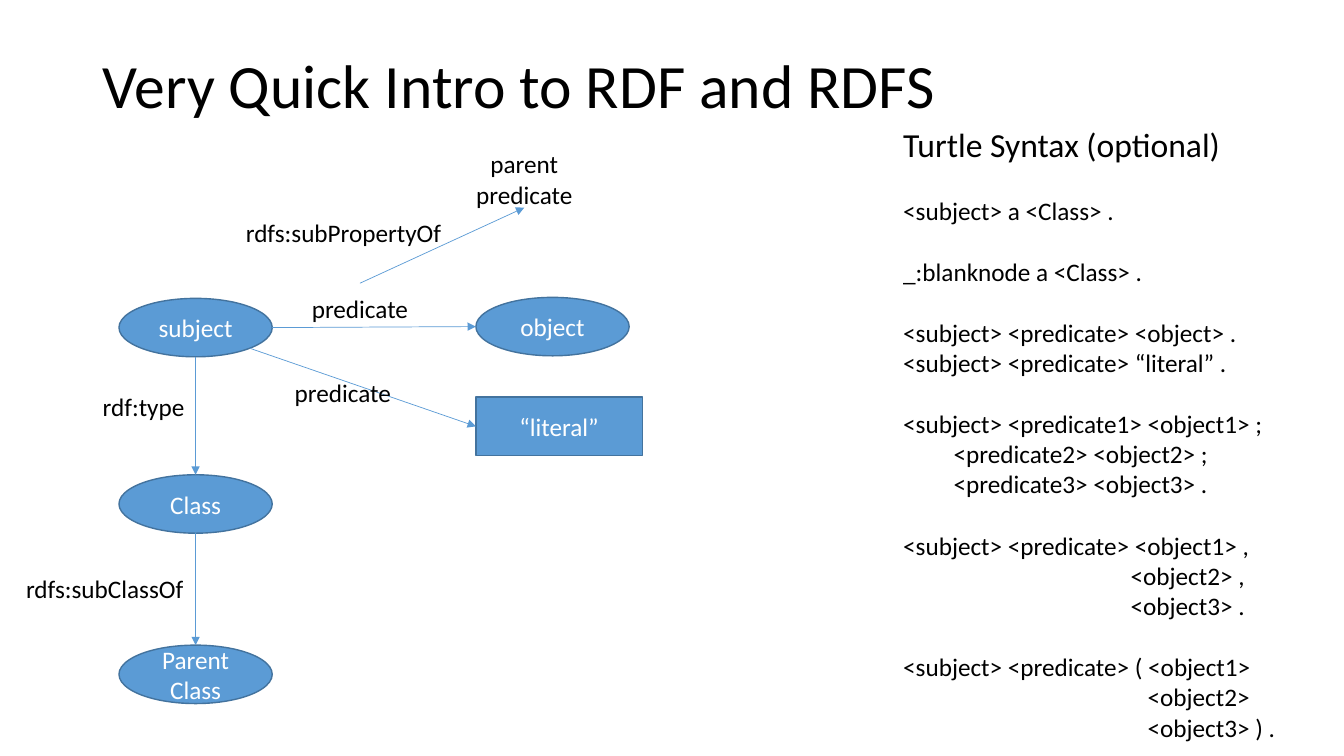
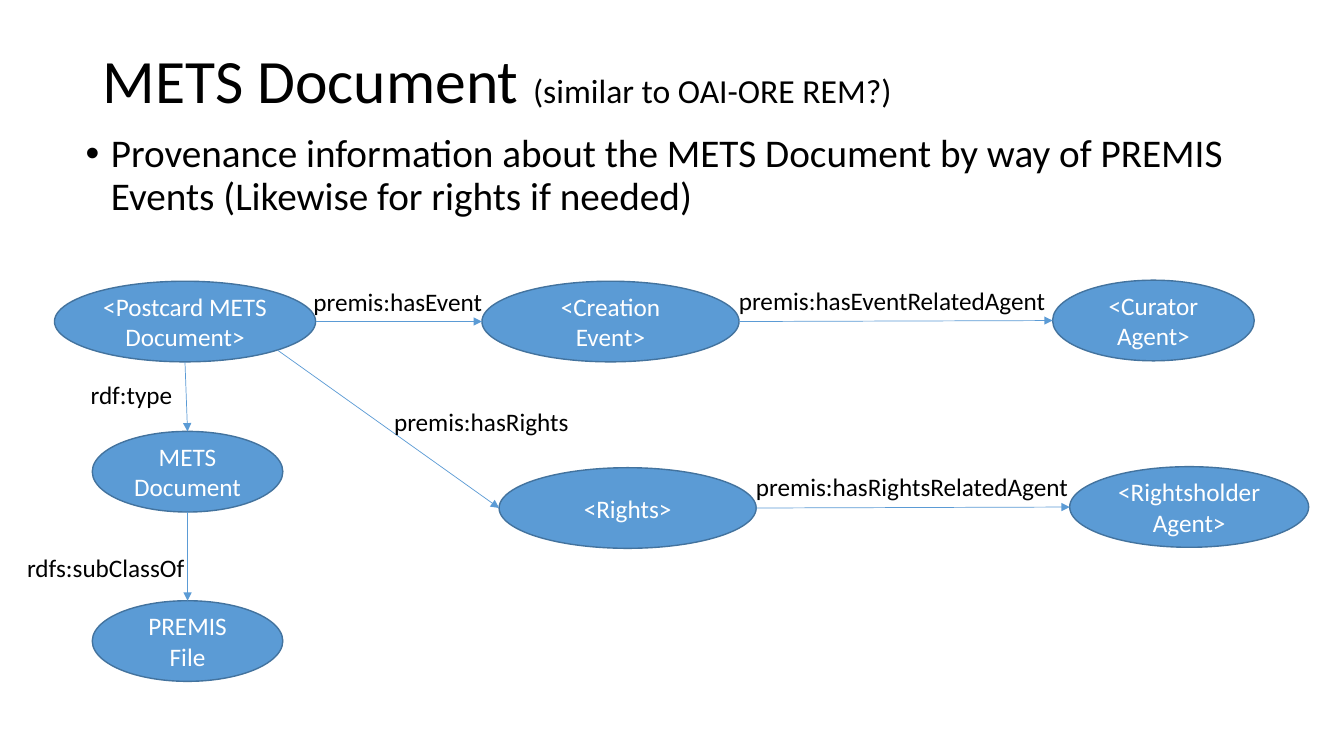
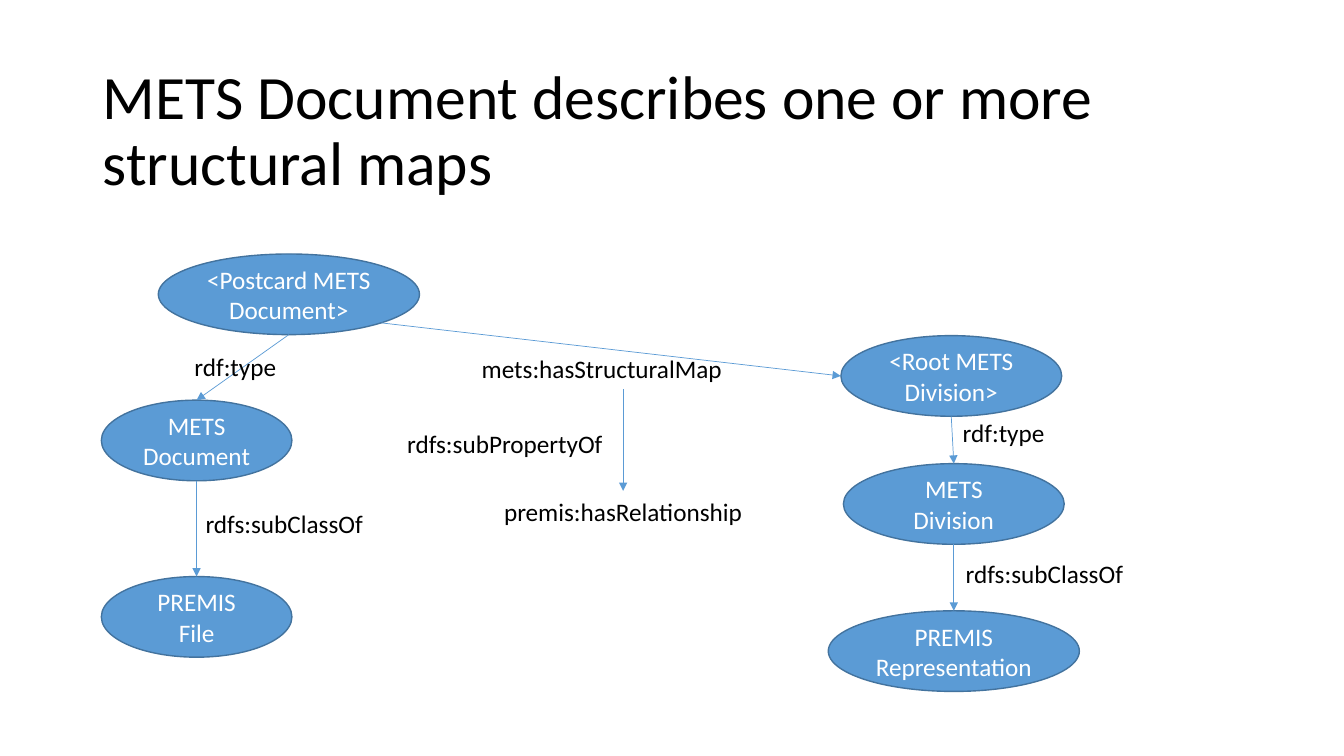
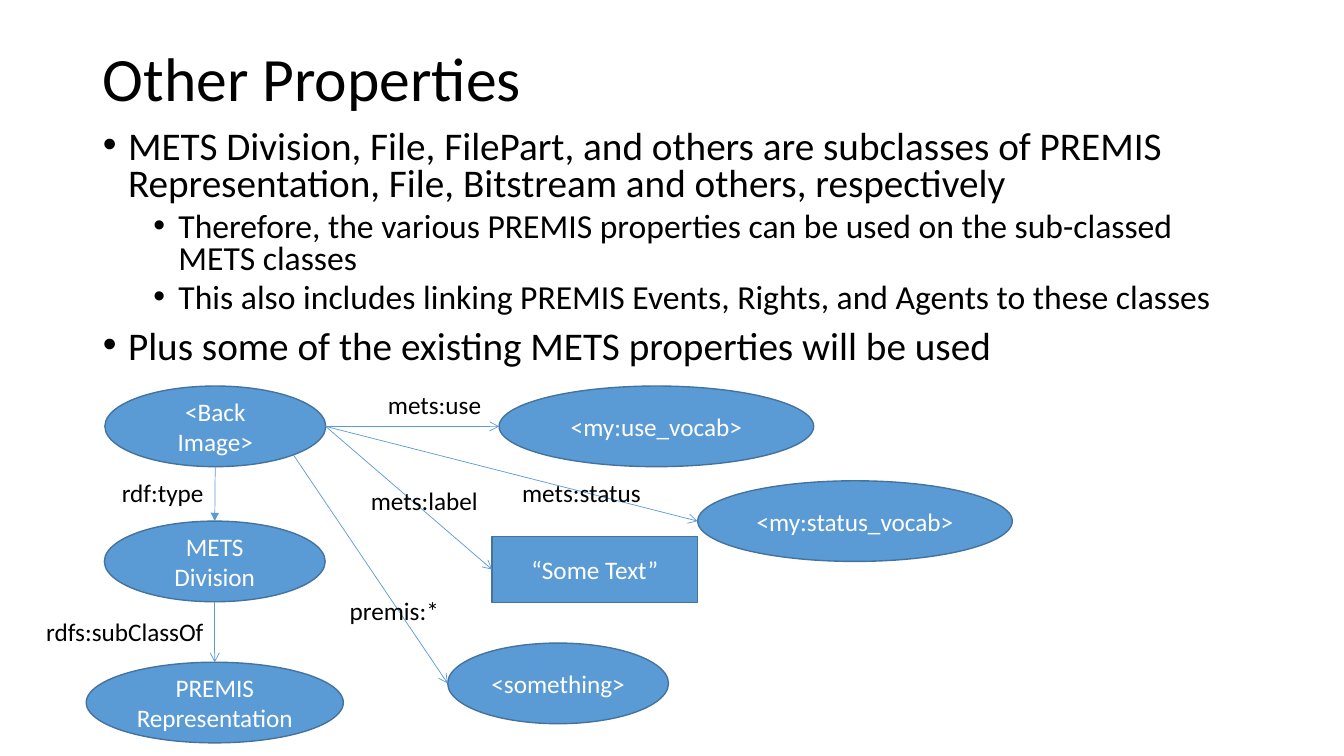
from pptx import Presentation
from pptx.dml.color import RGBColor
from pptx.enum.shapes import MSO_CONNECTOR, MSO_SHAPE
from pptx.enum.text import MSO_ANCHOR, MSO_AUTO_SIZE, PP_ALIGN
from pptx.oxml.ns import qn
from pptx.util import Inches, Pt
from lxml.etree import SubElement

COLORS = {"node": "5B9BD5", "edge": "43739E", "text": "000000", "node_text": "FFFFFF"}
FONT = "Calibri"
TITLE_ONLY, TITLE_AND_BODY = 5, 1
MARGIN, TITLE_TOP, CONTENT_WIDTH = 0.92, 0.4, 11.5
NODE_HEIGHT, LABEL_HEIGHT = 0.8, 0.4
BLANK_LINE = Pt(22)
# level: (indent in inches, text size, space before)
BULLETS = {0: (0.25, 28, 10), 1: (0.75, 24, 5)}
# share of the width and height at which an arrow meets a node
SIDES = {
    "top": (0.5, 0),
    "left": (0, 0.5),
    "bottom": (0.5, 1),
    "right": (1, 0.5),
    "low_right": (0.854, 0.854),
}

TURTLE_GROUPS = [
    "<subject> a <Class> .",
    "_:blanknode a <Class> .",
    "<subject> <predicate> <object> .\n<subject> <predicate> “literal” .",
    "<subject> <predicate1> <object1> ;\n\t<predicate2> <object2> ;\n\t<predicate3> <object3> .",
    "<subject> <predicate> <object1> ,\n"
    "                                        <object2> ,\n"
    "                                        <object3> .",
    "<subject> <predicate> ( <object1>\n"
    "                                           <object2>\n"
    "                                           <object3> ) .",
]


def color(name):
    return RGBColor.from_string(COLORS[name])


def place(shape, left, top, width, height):
    shape.left, shape.top = Inches(left), Inches(top)
    shape.width, shape.height = Inches(width), Inches(height)


def style(para, size, shade="text"):
    para.font.name = FONT
    para.font.size = Pt(size)
    para.font.color.rgb = color(shade)


def add_page(deck, layout, title, title_height, aside=""):
    """Add a slide with its title and an optional smaller remark after it."""
    page = deck.slides.add_slide(deck.slide_layouts[layout])
    box = page.shapes.title
    place(box, MARGIN, TITLE_TOP, CONTENT_WIDTH, title_height)
    frame = box.text_frame
    frame.auto_size = MSO_AUTO_SIZE.NONE
    frame.vertical_anchor = MSO_ANCHOR.MIDDLE
    para = frame.paragraphs[0]
    para.alignment = PP_ALIGN.LEFT
    para.line_spacing = 0.9
    para.add_run().text = title
    if aside:
        span = para.add_run()
        span.text = aside
        span.font.size = Pt(24)
    style(para, 44)
    return page


def fill_body(page, left, top, height, items, line_spacing):
    """Write (level, text) items as a bullet list in the body placeholder."""
    box = page.placeholders[1]
    place(box, left, top, CONTENT_WIDTH, height)
    frame = box.text_frame
    frame.auto_size = MSO_AUTO_SIZE.NONE
    for number, (level, text) in enumerate(items):
        para = frame.add_paragraph() if number else frame.paragraphs[0]
        indent, size, gap = BULLETS[level]
        para.text = text
        para.level = level
        para.line_spacing = line_spacing
        para.space_before = Pt(gap if number else 0)
        properties = para._p.get_or_add_pPr()
        properties.set("marL", str(Inches(indent)))
        properties.set("indent", str(-Inches(0.25)))
        SubElement(properties, qn("a:buFont"), typeface="Arial")
        SubElement(properties, qn("a:buChar"), char="•")
        style(para, size)


def add_node(page, text, left, top, width, height=NODE_HEIGHT, preset=MSO_SHAPE.OVAL):
    node = page.shapes.add_shape(preset, 0, 0, 0, 0)
    place(node, left, top, width, height)
    node.shadow.inherit = False
    node.fill.solid()
    node.fill.fore_color.rgb = color("node")
    node.line.color.rgb = color("edge")
    node.line.width = Pt(1)
    frame = node.text_frame
    frame.word_wrap = True
    frame.vertical_anchor = MSO_ANCHOR.MIDDLE
    para = frame.paragraphs[0]
    para.text = text
    para.alignment = PP_ALIGN.CENTER
    style(para, 18, "node_text")
    return node


def add_label(page, text, left, top, width, height=LABEL_HEIGHT, centred=False):
    box = page.shapes.add_textbox(0, 0, 0, 0)
    place(box, left, top, width, height)
    frame = box.text_frame
    frame.word_wrap = centred
    para = frame.paragraphs[0]
    para.text = text
    if centred:
        frame.vertical_anchor = MSO_ANCHOR.MIDDLE
        para.alignment = PP_ALIGN.CENTER
    style(para, 18)
    return box


def point(node, side):
    across, down = SIDES[side]
    return int(node.left + across * node.width), int(node.top + down * node.height)


def add_arrow(page, start, end, head="triangle"):
    arrow = page.shapes.add_connector(MSO_CONNECTOR.STRAIGHT, *start, *end)
    arrow.line.color.rgb = color("node")
    arrow.line.width = Pt(0.5)
    properties = arrow._element.spPr
    SubElement(properties.find(qn("a:ln")), qn("a:tailEnd"), type=head)
    SubElement(properties, qn("a:effectLst"))
    return arrow


def link(page, start, end, leave="right", arrive="left", head="triangle"):
    return add_arrow(page, point(start, leave), point(end, arrive), head)


def add_class_chain(page, instance, center, steps, height=NODE_HEIGHT, heads=("triangle", "triangle")):
    """Hang a class and its parent class below an instance.

    Each step is (text, width, drop, label shift, label drop); drops count from
    the top of the instance and label shifts from the center line.
    """
    top = instance.top.inches
    relations = (("rdf:type", 1.02), ("rdfs:subClassOf", 1.78))
    above = instance
    for step, (relation, label_width), head in zip(steps, relations, heads):
        text, width, drop, label_shift, label_drop = step
        node = add_node(page, text, center - width / 2, top + drop, width, height)
        link(page, above, node, "bottom", "top", head)
        add_label(page, relation, center + label_shift, top + label_drop, label_width)
        above = node


def add_turtle_listing(page, left, top, width, height):
    box = add_label(page, "Turtle Syntax (optional)", left, top, width, height)
    frame = box.text_frame
    style(frame.paragraphs[0], 24)
    for group in TURTLE_GROUPS:
        para = frame.add_paragraph()
        para.text = group
        para.space_before = BLANK_LINE
        style(para, 18)


def add_agent_row(page, origin, leave, main, agent, left, top, agent_width, relation, label_width):
    """Link the origin to a node, and that node to its agent on the right."""
    node = add_node(page, main, left, top, 2.55)
    related = add_node(page, agent, left + 5.66, top - 0.01, agent_width)
    link(page, origin, node, leave)
    link(page, node, related)
    add_label(page, relation, left + 2.45, top - 0.01, label_width)


def build_intro(deck):
    page = add_page(deck, TITLE_ONLY, "Very Quick Intro to RDF and RDFS", 0.95)
    height = 0.58
    subject = add_node(page, "subject", 1.18, 2.96, 1.52, height)
    target = add_node(page, "object", 4.72, 2.95, 1.52, height)
    literal = add_node(page, "“literal”", 4.72, 3.94, 1.65, height, MSO_SHAPE.RECTANGLE)
    add_class_chain(page, subject, 1.94, [
        ("Class", 1.52, 1.75, -1.02, 0.87),
        ("Parent Class", 1.52, 3.44, -1.78, 2.68),
    ], height)
    link(page, subject, target)
    link(page, subject, literal, "low_right").end_connect(literal, 1)
    parent = add_label(page, "parent predicate", 4.54, 1.49, 1.32, 0.57, centred=True)
    predicate = add_label(page, "predicate", 2.91, 2.81, 1.32, 0.5, centred=True)
    add_label(page, "predicate", 2.74, 3.64, 1.32, 0.5, centred=True)
    link(page, predicate, parent, "top", "bottom").begin_connect(predicate, 0)
    page.shapes[-1].end_connect(parent, 2)
    add_label(page, "rdfs:subPropertyOf", 2.34, 2.11, 2.16)
    add_turtle_listing(page, 8.86, 1.18, 3.97, 6.87)


def build_document(deck):
    page = add_page(deck, TITLE_AND_BODY, "METS Document ", 0.85, "(similar to OAI-ORE REM?)")
    fill_body(page, 0.75, 1.28, 1.52, [
        (0, "Provenance information about the METS Document by way of PREMIS Events "
            "(Likewise for rights if needed)"),
    ], 0.9)
    postcard = add_node(page, "<Postcard METS Document>", 0.54, 2.79, 2.59)
    add_class_chain(page, postcard, 1.86, [
        ("METS Document", 1.89, 1.49, -1.06, 0.92),
        ("PREMIS File", 1.89, 3.17, -1.69, 2.64),
    ])
    add_agent_row(page, postcard, "right", "<Creation Event>", "<Curator Agent>",
                  4.78, 2.79, 2, "premis:hasEventRelatedAgent", 3.27)
    add_agent_row(page, postcard, "low_right", "<Rights>", "<Rightsholder Agent>",
                  4.95, 4.64, 2.37, "premis:hasRightsRelatedAgent", 3.33)
    add_label(page, "premis:hasEvent", 3.01, 2.79, 1.89)
    add_label(page, "premis:hasRights", 3.81, 3.98, 1.95)


def build_structural_maps(deck):
    page = add_page(deck, TITLE_ONLY, "METS Document describes one or more structural maps", 1.83)
    postcard = add_node(page, "<Postcard METS Document>", 1.57, 2.52, 2.59)
    root = add_node(page, "<Root METS Division>", 8.34, 3.33, 2.19)
    link(page, postcard, root, "low_right")
    add_class_chain(page, postcard, 1.95, [
        ("METS Document", 1.89, 1.45, -0.12, 0.92),
        ("PREMIS File", 1.89, 3.2, -0.01, 2.47),
    ])
    add_class_chain(page, root, 9.46, [
        ("METS Division", 2.19, 1.27, -0.01, 0.76),
        ("PREMIS Representation", 2.49, 2.73, 0.02, 2.16),
    ])
    narrow = add_label(page, "mets:hasStructuralMap", 4.68, 3.46, 3)
    narrow.text_frame.word_wrap = True
    broad = add_label(page, "premis:hasRelationship", 4.68, 4.87, 3, centred=True)
    arrow = link(page, narrow, broad, "bottom", "top")
    arrow.begin_connect(narrow, 2)
    arrow.end_connect(broad, 0)
    add_label(page, "rdfs:subPropertyOf", 3.94, 4.2, 2.16)


def build_properties(deck):
    page = add_page(deck, TITLE_AND_BODY, "Other Properties", 0.81)
    fill_body(page, MARGIN, 1.24, 2.51, [
        (0, "METS Division, File, FilePart, and others are subclasses of PREMIS "
            "Representation, File, Bitstream and others, respectively"),
        (1, "Therefore, the various PREMIS properties can be used on the sub-classed METS classes"),
        (1, "This also includes linking PREMIS Events, Rights, and Agents to these classes"),
        (0, "Plus some of the existing METS properties will be used"),
    ], 0.8)
    image = add_node(page, "<Back Image>", 1.04, 3.83, 2.19)
    add_class_chain(page, image, 2.13, [
        ("METS Division", 2.19, 1.34, -1.02, 0.86),
        ("PREMIS Representation", 2.55, 2.74, -1.77, 2.24),
    ], heads=("triangle", "arrow"))
    use = add_node(page, "<my:use_vocab>", 4.95, 3.83, 3.12)
    status = add_node(page, "<my:status_vocab>", 6.92, 4.77, 3.12)
    text = add_node(page, "“Some Text”", 4.88, 5.32, 2.04, 0.66, MSO_SHAPE.RECTANGLE)
    something = add_node(page, "<something>", 4.44, 6.38, 2.19)
    for node in (use, status):
        link(page, image, node, head="arrow")
    link(page, image, text, head="arrow").end_connect(text, 1)
    link(page, image, something, "low_right", head="arrow")
    for relation, left, top, width in (
        ("mets:use", 3.75, 3.81, 1.14),
        ("mets:status", 5.08, 4.69, 1.39),
        ("mets:label", 3.58, 4.77, 1.28),
        ("premis:*", 3.37, 5.86, 1.1),
    ):
        add_label(page, relation, left, top, width)


def main():
    deck = Presentation()
    deck.slide_width, deck.slide_height = Inches(13.33), Inches(7.5)
    for build in (build_intro, build_document, build_structural_maps, build_properties):
        build(deck)
    deck.save("out.pptx")


if __name__ == "__main__":
    main()
